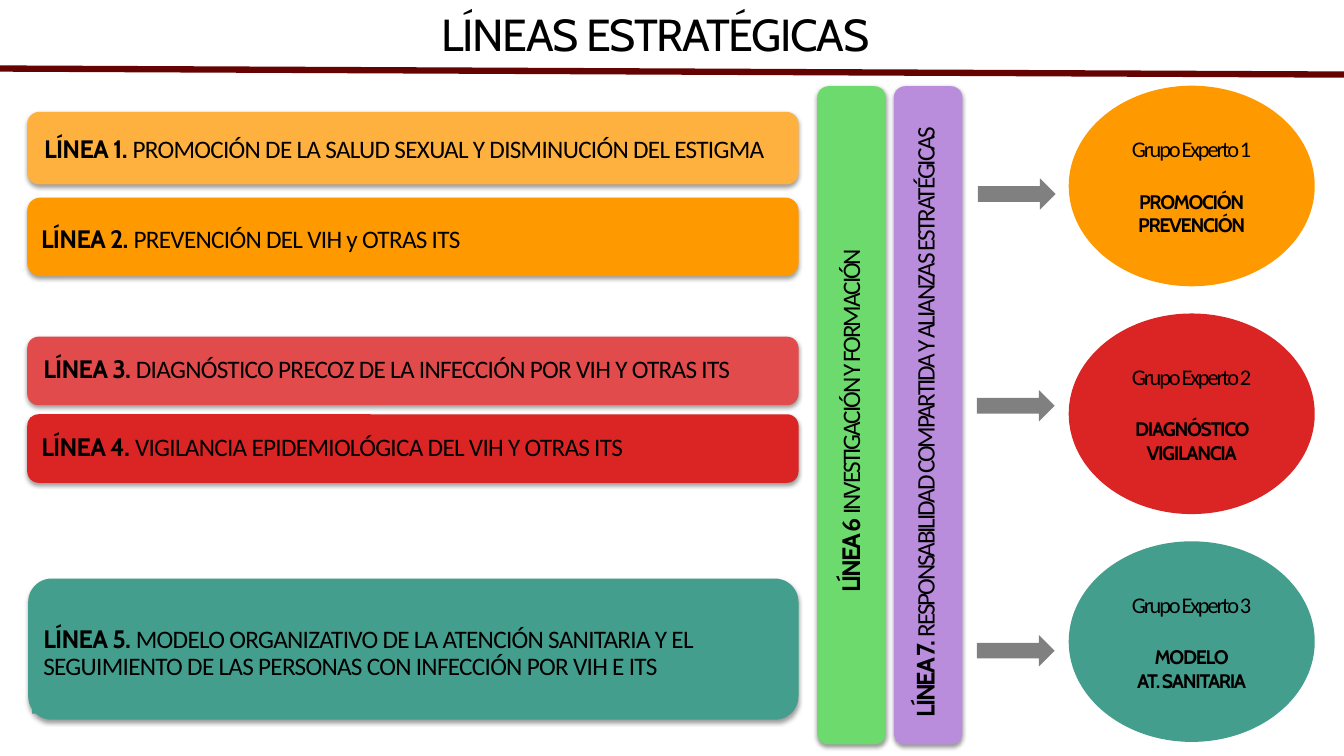
from lxml import etree
from pptx import Presentation
from pptx.dml.color import RGBColor
from pptx.enum.shapes import MSO_CONNECTOR, MSO_SHAPE
from pptx.enum.text import MSO_ANCHOR, PP_ALIGN
from pptx.oxml.ns import qn
from pptx.util import Pt

PX = 9144  # EMU per px, 100 px to the inch
ROUNDED, RECTANGLE = MSO_SHAPE.ROUNDED_RECTANGLE, MSO_SHAPE.RECTANGLE
OVAL, ARROW = MSO_SHAPE.OVAL, MSO_SHAPE.RIGHT_ARROW
LEFT, CENTER = PP_ALIGN.LEFT, PP_ALIGN.CENTER
MIDDLE = MSO_ANCHOR.MIDDLE

THEME = {
    "heading": "Cabin", "body": "Calibri",
    "title_size": 32, "line_size": 18, "group_size": 16, "topic_size": 14,
    "text": "000000", "rule": "650303", "arrow": "808080",
    "amber": "FFB13F", "orange": "FF9900", "coral": "E14B4B", "red": "DB2525",
    "teal": "449E8D", "green": "6CDA6C", "purple": "BA8CDC",
}

presentation = Presentation()
presentation.slide_width, presentation.slide_height = 1333 * PX, 750 * PX
slide = presentation.slides.add_slide(presentation.slide_layouts[6])


def add_flat_shape(kind, box, color, rotation=0):
    shape = slide.shapes.add_shape(kind, *(length * PX for length in box))
    shape.rotation = rotation
    shape.shadow.inherit = False
    shape.fill.solid()
    shape.fill.fore_color.rgb = RGBColor.from_string(THEME[color])
    shape.line.fill.background()
    return shape


def format_run(run, font, size, spacing, bold=False):
    run.font.name, run.font.size, run.font.bold = THEME[font], Pt(THEME[size]), bold
    run.font.color.rgb = RGBColor.from_string(THEME["text"])
    run._r.get_or_add_rPr().set("spc", str(int(spacing * 100)))


# Title and rule
title = slide.shapes.add_textbox(428 * PX, 2 * PX, 465 * PX, 116 * PX)
title.text_frame.word_wrap = True
title.text_frame.text = "LÍNEAS ESTRATÉGICAS"
format_run(title.text_frame.paragraphs[0].runs[0], "heading", "title_size", -1)

rule = slide.shapes.add_connector(MSO_CONNECTOR.STRAIGHT, 0, 68 * PX, 1333 * PX, 74 * PX)
rule.line.color.rgb = RGBColor.from_string(THEME["rule"])
rule.line.width = Pt(4.5)
etree.SubElement(rule._element.spPr, qn("a:effectLst"))

# Strategic lines: card, label box, inset, colour, rotation, number, name
strategic_lines = [
    ((27, 111, 765, 72), (34, 117, 747, 65), 10, "amber", 0,
     "LÍNEA 1. ", "PROMOCIÓN DE LA SALUD SEXUAL Y DISMINUCIÓN DEL ESTIGMA"),
    ((27, 196, 765, 78), (31, 208, 757, 61), 10, "orange", 0,
     "LÍNEA 2.", " PREVENCIÓN DEL VIH y OTRAS ITS"),
    ((27, 334, 765, 68), (32, 337, 717, 61), 11, "coral", 0,
     "LÍNEA 3. ", "DIAGNÓSTICO PRECOZ DE LA INFECCIÓN POR VIH Y OTRAS ITS"),
    ((27, 411, 765, 68), (30, 414, 720, 61), 11, "red", 0,
     "LÍNEA 4. ", "VIGILANCIA EPIDEMIOLÓGICA DEL VIH Y OTRAS ITS"),
    ((28, 574, 764, 140), (32, 590, 736, 118), 11, "teal", 0, "LÍNEA 5. ",
     "MODELO ORGANIZATIVO DE LA ATENCIÓN SANITARIA Y EL "
     "SEGUIMIENTO DE LAS PERSONAS CON INFECCIÓN POR VIH E ITS"),
    ((518, 378, 653, 68), (527, 387, 636, 61), 11, "green", 270,
     "LÍNEA 6 ", "INVESTIGACIÓN Y FORMACIÓN"),
    ((594, 378, 653, 68), (602, 388, 634, 61), 11, "purple", 270,
     "LÍNEA 7.", " RESPONSABILIDAD COMPARTIDA Y ALIANZAS ESTRATÉGICAS"),
]
for card_box, label_box, inset, color, rotation, number, name in strategic_lines:
    card = add_flat_shape(ROUNDED, card_box, color, rotation)
    effects = card._element.spPr.find(qn("a:effectLst"))
    shadow = etree.SubElement(effects, qn("a:outerShdw"), blurRad="40000", dist="20000",
                              dir="5400000", rotWithShape="0")
    shadow_color = etree.SubElement(shadow, qn("a:srgbClr"), val="000000")
    etree.SubElement(shadow_color, qn("a:alpha"), val="38000")

    label = add_flat_shape(RECTANGLE, label_box, color, rotation)
    frame = label.text_frame
    frame.word_wrap, frame.vertical_anchor = True, MIDDLE
    frame.margin_left = frame.margin_right = inset * PX
    frame.margin_top = frame.margin_bottom = inset * PX
    paragraph = frame.paragraphs[0]
    paragraph.alignment = CENTER if rotation else LEFT
    paragraph.line_spacing, paragraph.space_after = 0.9, Pt(6.3)
    spacing = -1.5 if rotation else -0.5
    for text, font, bold in ((number, "heading", True), (name, "body", False)):
        run = paragraph.add_run()
        run.text = text
        format_run(run, font, "line_size", spacing, bold)

# Arrows to the expert groups
for left, top in ((970, 177), (969, 387), (969, 630)):
    add_flat_shape(ARROW, (left, top, 77, 31), "arrow")

# Expert groups
expert_groups = [
    ("orange", ["PROMOCIÓN", "PREVENCIÓN"]),
    ("red", ["DIAGNÓSTICO VIGILANCIA"]),
    ("teal", ["MODELO", "AT. SANITARIA"]),
]
for index, (color, topics) in enumerate(expert_groups):
    group = add_flat_shape(OVAL, (1060, 85 + 226 * index, 244, 199), color)
    frame = group.text_frame
    frame.word_wrap, frame.vertical_anchor = True, MIDDLE
    frame.text = "\n".join([f"Grupo Experto {index + 1}"] + topics)
    for paragraph in frame.paragraphs:
        paragraph.alignment = CENTER
        format_run(paragraph.runs[0], "heading", "topic_size", -1, True)
    format_run(frame.paragraphs[0].runs[0], "body", "group_size", -1.5)
    frame.paragraphs[1].space_before = Pt(19.5)

presentation.save("out.pptx")
